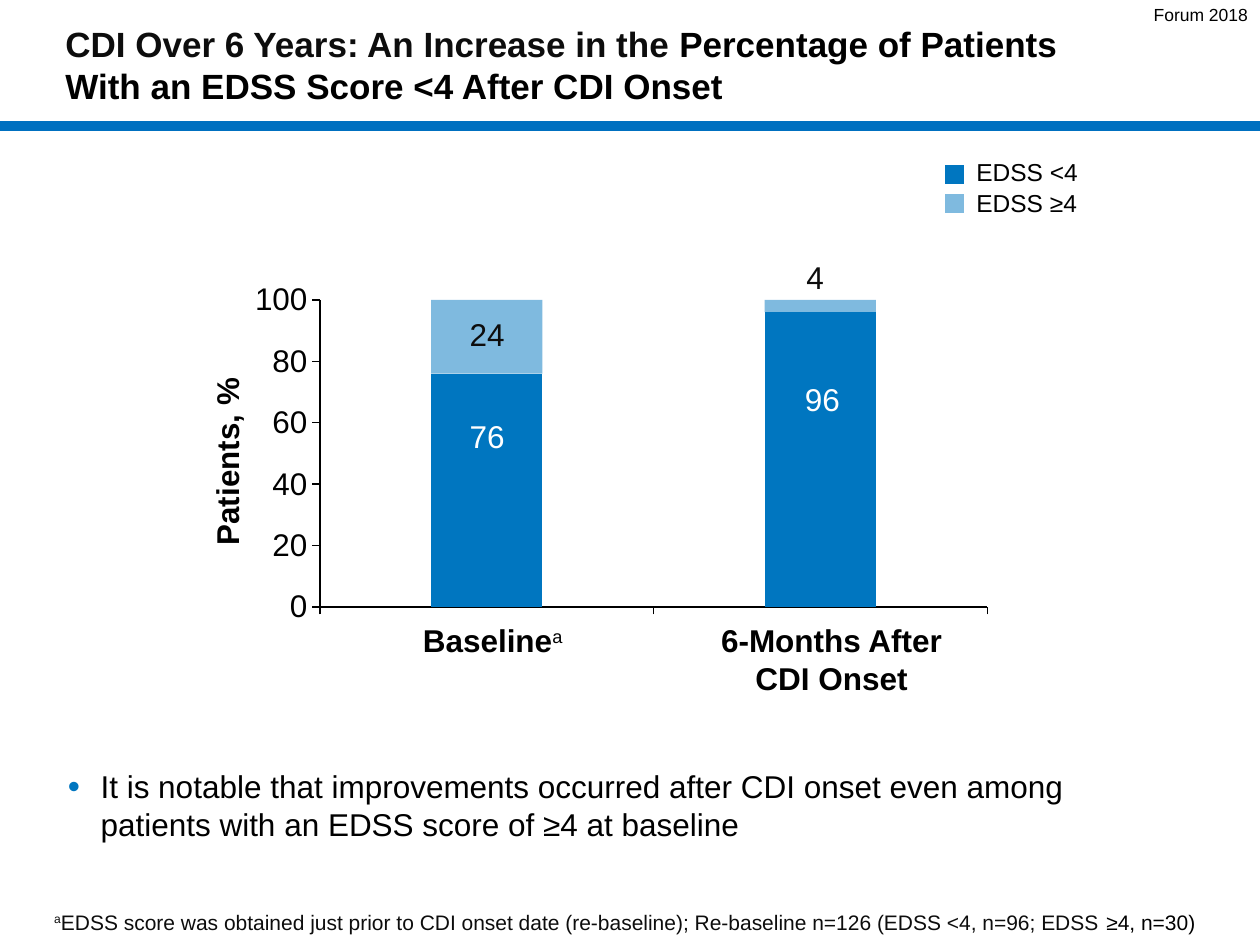
from lxml.etree import SubElement as Sub
from pptx import Presentation
from pptx.chart.data import CategoryChartData as Data
from pptx.dml.color import RGBColor as RGB
from pptx.enum.chart import XL_CHART_TYPE as Kind, XL_TICK_LABEL_POSITION as Spot, XL_TICK_MARK as Tick
from pptx.enum.shapes import MSO_CONNECTOR as Line, MSO_SHAPE as Form
from pptx.enum.text import MSO_ANCHOR as Anchor, PP_ALIGN as Align
from pptx.oxml.ns import qn
from pptx.util import Inches, Pt

THEME = dict(font="Arial", rule="0070C0", bar="0076C0", ink="000000", dark="0D0D0D",
             pale="FFFFFF", head=20, body=18, key=14, note=12, tag=10)
INSET = (0.1, 0.05, 0.1, 0.05)
MID, LEFT, RIGHT = Align.CENTER, Align.LEFT, Align.RIGHT


def run(text, size="body", color="ink", bold=False, sup=False):
    return dict(text=text, size=size, color=color, bold=bold, sup=sup)


# Content: place, alignment, runs, and any special format
TEXTS = [
    ((0.42, 0.18, 8.13, 0.9), LEFT,
     [run("CDI Over 6 Years: An Increase in the ", "head", "dark", True),
      run("Percentage of Patients With an EDSS Score <4 After CDI Onset", "head", bold=True)],
     dict(inset=(0.1, 0, 0.1, 0))),
    ((0.43, 7.11, 9.41, 0.41), LEFT,
     [run("a", "note", "dark", sup=True),
      run("EDSS score was obtained just prior to CDI onset date (re-baseline); "
          "Re-baseline n=126 (EDSS <4, n=96; EDSS ", "note", "dark"),
      run("≥4, n=30)", "note")],
     dict(inset=(0, 0, 0, 0), anchor=Anchor.MIDDLE)),
    ((8.12, -0.02, 1.88, 0.27), RIGHT, [run("Forum 2018", "tag")], {}),
    ((3.07, 4.88, 1.68, 0.4), MID, [run("Baseline", bold=True), run("a", sup=True)], {}),
    ((5.55, 4.88, 2.1, 0.71), MID, [run("6-Months After CDI Onset", bold=True)], {}),
    ((0.44, 6.04, 8.64, 0.69), LEFT,
     [run("It is notable that improvements occurred after CDI onset even among "
          "patients with an EDSS score of ≥4 at baseline")], dict(bullet=True)),
]
MARKS = [("76", 3.63, 3.26, "pale", LEFT), ("24", 3.63, 2.45, "dark", LEFT),
         ("96", 6.29, 2.97, "pale", LEFT), ("4", 6.19, 2.0, "dark", MID)]
SERIES = [("Series 1", (76, 96)), ("Series 2", (24, 4))]
KEYS = ["EDSS <4", "EDSS ≥4"]


def tint(name):
    return RGB.from_string(THEME[name])


def style(font, size, color="ink", bold=False):
    for key, val in dict(name=THEME["font"], size=Pt(THEME[size]), bold=bold).items():
        setattr(font, key, val)
    font.color.rgb = tint(color)


def paint(fill, root, faded):
    fill.solid()
    fill.fore_color.rgb = tint("bar")
    if faded:
        Sub(next(root.iter(qn("a:srgbClr"))), qn("a:alpha"), val="50000")


def dot(par):
    """Give the paragraph a hanging coloured bullet."""
    props = par._p.get_or_add_pPr()
    props.set("marL", str(Inches(0.26)))
    props.set("indent", str(Inches(-0.26)))
    Sub(Sub(props, qn("a:buClr")), qn("a:srgbClr"), val=THEME["bar"])
    Sub(props, qn("a:buSzPct"), val="110000")
    Sub(props, qn("a:buFont"), typeface=THEME["font"])
    Sub(props, qn("a:buChar"), char="•")


def write(slide, place, align, runs, inset=INSET, anchor=Anchor.TOP, bullet=False):
    frame = slide.shapes.add_textbox(*map(Inches, place)).text_frame
    sides = ("margin_left", "margin_top", "margin_right", "margin_bottom")
    form = dict(zip(sides, map(Inches, inset)), word_wrap=True, vertical_anchor=anchor)
    for key, val in form.items():
        setattr(frame, key, val)
    par = frame.paragraphs[0]
    par.alignment = align
    if bullet:
        dot(par)
    for item in runs:
        part = par.add_run()
        part.text = item["text"]
        style(part.font, item["size"], item["color"], item["bold"])
        if item["sup"]:
            part._r.get_or_add_rPr().set("baseline", "30000")


def place(layout, **spots):
    """Fill a chart layout element with fixed positions."""
    box = Sub(layout, qn("c:manualLayout"))
    for key, val in spots.items():
        Sub(box, qn("c:" + key), val=str(val))


def draw(slide):
    data = Data()
    data.categories = ["1", "2"]
    for name, vals in SERIES:
        data.add_series(name, vals)
    spot = map(Inches, (1.4, 2.24, 6.44, 3.35))
    chart = slide.shapes.add_chart(Kind.COLUMN_STACKED, *spot, data).chart
    chart.has_legend = chart.has_title = False
    style(chart.font, "tag")

    # Bars
    plot = chart.plots[0]
    for key, val in dict(gap_width=200, overlap=100, vary_by_categories=False).items():
        setattr(plot, key, val)
    roots = chart.element.findall(".//" + qn("c:ser"))
    for num, (ser, root) in enumerate(zip(plot.series, roots)):
        paint(ser.format.fill, root, num == 1)

    # Axes
    cat, val = chart.category_axis, chart.value_axis
    for axis in (cat, val):
        axis.has_major_gridlines = False
        axis.major_tick_mark, axis.minor_tick_mark = Tick.OUTSIDE, Tick.NONE
        axis.format.line.color.rgb = tint("ink")
        axis.format.line.width = Pt(0.75)
        style(axis.tick_labels.font, "body")
    cat.tick_label_position = Spot.NONE
    for key, num in dict(minimum_scale=0, maximum_scale=100, major_unit=20).items():
        setattr(val, key, num)
    frame = val.axis_title.text_frame
    frame.text = "Patients, %"
    style(frame.paragraphs[0].runs[0].font, "body", bold=True)
    body = next(val.axis_title.element.iter(qn("a:bodyPr")))
    body.set("rot", "-5400000")
    body.set("vert", "horz")

    # Fixed places for the title and the plot
    title = val.axis_title.element
    layout = title.find(qn("c:layout"))
    if layout is None:
        layout = Sub(title, qn("c:layout"))
        title.find(qn("c:tx")).addnext(layout)
    place(layout, xMode="edge", yMode="edge", x=0.03, y=0.21)
    area = chart.element.find(".//" + qn("c:plotArea"))
    layout = area.find(qn("c:layout"))
    if layout is None:
        layout = Sub(area, qn("c:layout"))
        area.insert(0, layout)
    place(layout, layoutTarget="inner", xMode="edge", yMode="edge",
          x=0.177, y=0.036, w=0.823, h=0.732)


def main():
    deck = Presentation()
    deck.slide_width, deck.slide_height = Inches(10), Inches(7.5)
    slide = deck.slides.add_slide(deck.slide_layouts[6])

    # Rule under the title
    rule = slide.shapes.add_connector(Line.STRAIGHT, 0, Inches(1), Inches(10), Inches(1))
    rule.line.color.rgb = tint("rule")
    rule.line.width = Pt(5.75)
    Sub(rule.element.spPr, qn("a:effectLst"))

    draw(slide)
    for spot, align, runs, form in TEXTS:
        write(slide, spot, align, runs, **form)

    # Values on the bars
    for text, left, top, color, align in MARKS:
        write(slide, (left, top, 0.56, 0.4), align, [run(text, color=color)])

    # Legend
    for num, text in enumerate(KEYS):
        top = 1.31 + 0.23 * num
        box = slide.shapes.add_shape(Form.RECTANGLE, *map(Inches, (7.5, top, 0.15, 0.15)))
        box.shadow.inherit = False
        box.line.fill.background()
        paint(box.fill, box.element.spPr, num == 1)
        write(slide, (7.65, 1.2 + 0.24 * num, 2.18, 0.34), LEFT, [run(text, "key")])

    deck.save("out.pptx")


if __name__ == "__main__":
    main()
